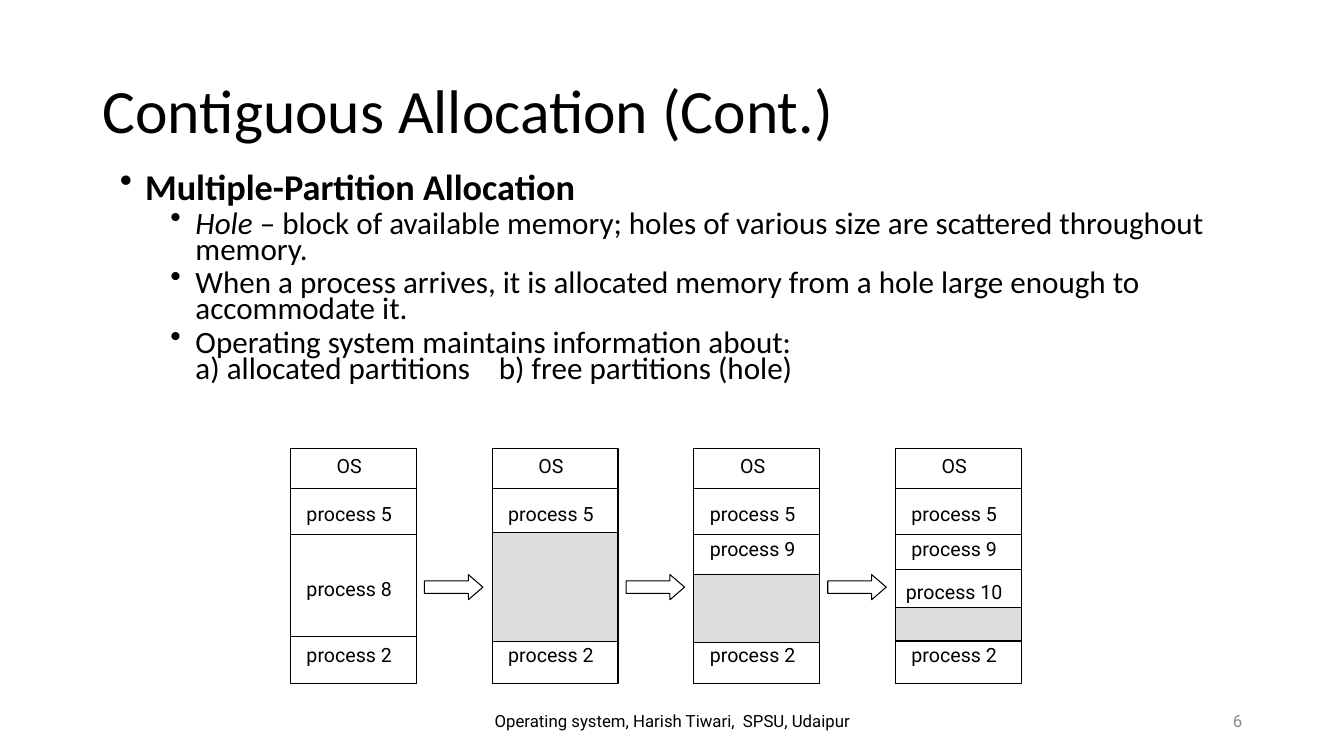
from dataclasses import dataclass

from pptx import Presentation
from pptx import util as u
from pptx.dml.color import RGBColor
from pptx.enum import shapes, text
from pptx.oxml.ns import qn
from lxml import etree

PX = 9144  # 100 px to the inch


@dataclass(frozen=True)
class Theme:
    ink: str = "000000"
    paper: str = "FFFFFF"
    hole: str = "DDDDDD"
    muted: str = "898989"
    heading_font: str = "Calibri"
    label_font: str = "Roboto"
    title: float = 44
    topic: float = 25.9
    detail: float = 22.2
    label: float = 14
    footer: float = 12
    line: float = 0.75


THEME = Theme()
ALIGN = text.PP_ALIGN


def px(*lengths):
    return [round(length * PX) for length in lengths]


def set_font(font, name, size, color=THEME.ink, bold=None):
    font.name, font.size, font.bold = name, u.Pt(size), bold
    font.color.rgb = RGBColor.from_string(color)


def add_frame(page, box, anchor=text.MSO_ANCHOR.MIDDLE):
    frame = page.shapes.add_textbox(*px(*box)).text_frame
    frame.word_wrap = True
    frame.vertical_anchor = anchor
    return frame


def add_text(page, box, words, font, size, align, color=THEME.ink):
    para = add_frame(page, box).paragraphs[0]
    para.text = words
    para.alignment = align
    set_font(para.font, font, size, color)
    return para


def add_block(page, kind, box, fill):
    block = page.shapes.add_shape(kind, *px(*box))
    block.shadow.inherit = False
    block.fill.solid()
    block.fill.fore_color.rgb = RGBColor.from_string(fill)
    block.line.color.rgb = RGBColor.from_string(THEME.ink)
    block.line.width = u.Pt(THEME.line)
    return block


def add_divider(page, left, top, width):
    line = page.shapes.add_connector(
        shapes.MSO_CONNECTOR.STRAIGHT, *px(left, top, left + width, top))
    line.line.color.rgb = RGBColor.from_string(THEME.ink)
    line.line.width = u.Pt(THEME.line)
    etree.SubElement(line._element.spPr, qn("a:effectLst"))


def set_bullet(para, indent, hang, tab=None):
    props = para._p.get_or_add_pPr()
    props.set("marL", str(indent * PX))
    props.set("indent", str(-hang * PX))
    bullet = etree.Element(qn("a:buChar"), char="•")
    following = props.find(qn("a:defRPr"))
    following.addprevious(bullet)
    if tab:
        stops = etree.Element(qn("a:tabLst"))
        etree.SubElement(stops, qn("a:tab"), pos=str(tab * PX), algn="l")
        following.addprevious(stops)


# Title
def add_title(page, box):
    para = add_text(page, box, "Contiguous Allocation (Cont.)",
                    THEME.heading_font, THEME.title, ALIGN.LEFT)
    para.line_spacing = 0.9


# Bulleted explanation: level, then runs as (words, italic)
POINTS = [
    (0, [("Multiple-Partition Allocation", False)]),
    (1, [("Hole", True),
         (" – block of available memory; holes of various size are "
          "scattered throughout memory.", False)]),
    (1, [("When a process arrives, it is allocated memory from a hole "
          "large enough to accommodate it.", False)]),
    (1, [("Operating system maintains information about:\v"
          "a) allocated partitions\tb) free partitions (hole)", False)]),
]


def add_points(page, box):
    frame = add_frame(page, box, text.MSO_ANCHOR.TOP)
    for index, (level, runs) in enumerate(POINTS):
        para = frame.add_paragraph() if index else frame.paragraphs[0]
        para.level = level
        para.line_spacing = 0.7
        para.space_before = u.Pt(5 if level else 10)
        set_font(para.font, THEME.heading_font,
                 THEME.detail if level else THEME.topic, bold=level == 0)
        if len(runs) == 1:
            para.text = runs[0][0]
        else:
            for words, italic in runs:
                span = para.add_run()
                span.text = words
                span.font.italic = italic
        has_tab = any("\t" in words for words, _ in runs)
        set_bullet(para, 75 if level else 25, 25, tab=376 if has_tab else None)


# Memory diagram: tops and heights are measured from the top of a column
COLUMN_WIDTH, PITCH = 125, 200
LABEL_WIDTH, LABEL_HEIGHT = 117, 33
DIVIDERS = [40, 85, 186]
SHARED_LABELS = {"OS": 0, "process 5": 48, "process 2": 188}
STAGES = [  # extra labels, hole (top, height), extra dividers
    ({"process 8": 123}, None, []),
    ({}, (83, 108), []),
    ({"process 9": 83}, (125, 67), []),
    ({"process 9": 83, "process 10": 125}, (158, 33), [120]),
]


def add_column(page, box, labels, hole, dividers):
    left, top, width, _ = box
    add_block(page, shapes.MSO_SHAPE.RECTANGLE, box, THEME.paper)
    for offset in DIVIDERS + dividers:
        add_divider(page, left, top + offset, width)
    if hole:
        add_block(page, shapes.MSO_SHAPE.RECTANGLE,
                  (left, top + hole[0], width, hole[1]), THEME.hole)
    for words, offset in {**SHARED_LABELS, **labels}.items():
        add_text(page, (left, top + offset, LABEL_WIDTH, LABEL_HEIGHT), words,
                 THEME.label_font, THEME.label, ALIGN.CENTER)


def add_diagram(page, box):
    left, top, _, height = box
    for index, stage in enumerate(STAGES):
        x = left + index * PITCH
        add_column(page, (x, top, COLUMN_WIDTH, height), *stage)
        if index:
            arrow = add_block(page, shapes.MSO_SHAPE.RIGHT_ARROW,
                              (x - 67, top + 125, 58, 25), THEME.paper)
            arrow.adjustments[1] = 0.58


# Footer and page number
def add_footer(page, box):
    left, top, width, height = box
    add_text(page, (left, top, 450, height),
             "Operating system, Harish Tiwari,  SPSU, Udaipur",
             THEME.label_font, THEME.footer, ALIGN.CENTER)
    add_text(page, (left + width - 300, top, 300, height), "6",
             THEME.label_font, THEME.footer, ALIGN.RIGHT, THEME.muted)


def main():
    deck = Presentation()
    deck.slide_width, deck.slide_height = px(1333, 750)
    page = deck.slides.add_slide(deck.slide_layouts[6])
    add_title(page, (92, 40, 1150, 145))
    add_points(page, (109, 170, 1182, 237))
    add_diagram(page, (288, 445, 725, 233))
    add_footer(page, (442, 695, 800, 40))
    deck.save("out.pptx")


if __name__ == "__main__":
    main()
